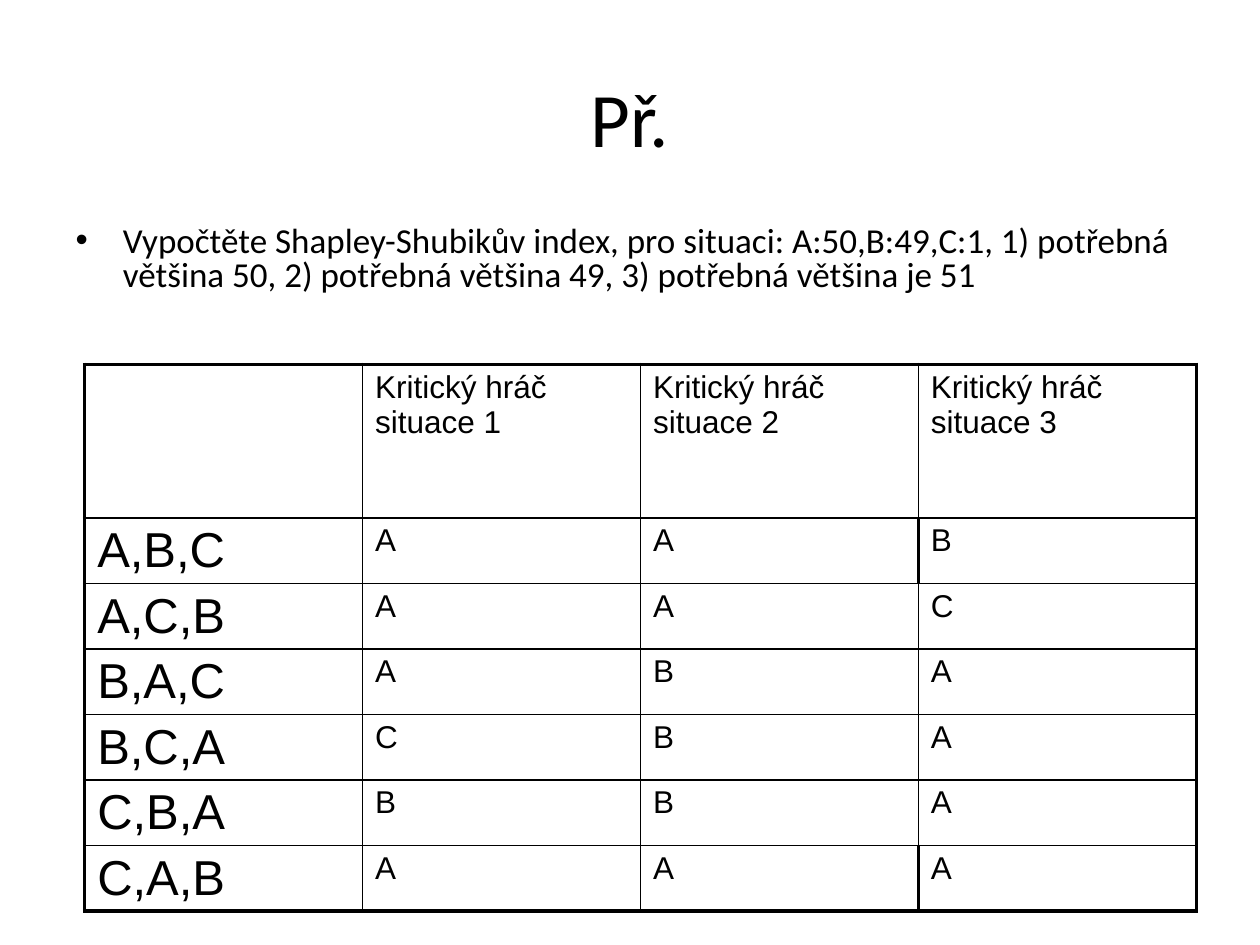
import pptx
import pptx.util
import pptx.dml.color
import pptx.enum.text
import pptx.oxml
import pptx.oxml.ns

Pt = pptx.util.Pt
BLACK = pptx.dml.color.RGBColor(0, 0, 0)
WHITE = pptx.dml.color.RGBColor(255, 255, 255)
THIN, THICK = 1, 2.25

ROWS = [
    ["", "Kritický hráč situace 1", "Kritický hráč situace 2", "Kritický hráč situace 3"],
    ["A,B,C", "A", "A", "B"],
    ["A,C,B", "A", "A", "C"],
    ["B,A,C", "A", "B", "A"],
    ["B,C,A", "C", "B", "A"],
    ["C,B,A", "B", "B", "A"],
    ["C,A,B", "A", "A", "A"],
]
HEADER_HEIGHT, ROW_HEIGHT = 87.8, 36
COLUMN_WIDTH = 158.8
# Rows whose divider before the last column is thick
THICK_DIVIDER_ROWS = (1, len(ROWS) - 1)


def set_values(target, values):
    for name, value in values.items():
        setattr(target, name, value)


def fill_placeholder(box, bounds, text, size, anchor, **para_format):
    for name, value in zip(("left", "top", "width", "height"), bounds):
        setattr(box, name, Pt(value))
    frame = box.text_frame
    set_values(frame, {"word_wrap": True, "vertical_anchor": anchor,
                       "auto_size": pptx.enum.text.MSO_AUTO_SIZE.NONE})
    para = frame.paragraphs[0]
    set_values(para, para_format)
    add_span(para, text, "Calibri", size)


def add_span(para, text, font, size):
    span = para.add_run()
    span.text = text
    set_values(span.font, {"name": font, "size": Pt(size)})
    span.font.color.rgb = BLACK


def border_widths(row, column):
    """Widths of the left, right, top and bottom borders of a cell."""
    last_row, last_column = len(ROWS) - 1, len(ROWS[0]) - 1
    divided = row in THICK_DIVIDER_ROWS
    thick = {
        "L": column == 0 or (divided and column == last_column),
        "R": column == last_column or (divided and column == last_column - 1),
        "T": row == 0,
        "B": row == last_row,
    }
    return {side: THICK if is_thick else THIN for side, is_thick in thick.items()}


def set_borders(cell, widths):
    properties = cell._tc.get_or_add_tcPr()
    for side, width in widths.items():
        properties.append(pptx.oxml.parse_xml(
            f'<a:ln{side} {pptx.oxml.ns.nsdecls("a")} w="{int(Pt(width))}">'
            f'<a:solidFill><a:srgbClr val="{BLACK}"/></a:solidFill></a:ln{side}>'))


def add_player_table(page):
    height = HEADER_HEIGHT + ROW_HEIGHT * (len(ROWS) - 1)
    table = page.shapes.add_table(
        len(ROWS), len(ROWS[0]), Pt(48.4), Pt(208.2),
        Pt(COLUMN_WIDTH * len(ROWS[0])), Pt(height)).table
    set_values(table, {"first_row": False, "horz_banding": False})
    for column in table.columns:
        column.width = Pt(COLUMN_WIDTH)
    for row, texts in enumerate(ROWS):
        table.rows[row].height = Pt(ROW_HEIGHT if row else HEADER_HEIGHT)
        for column, text in enumerate(texts):
            cell = table.cell(row, column)
            set_values(cell, {"margin_top": Pt(3.1), "margin_bottom": Pt(3.1)})
            set_borders(cell, border_widths(row, column))
            cell.fill.solid()
            cell.fill.fore_color.rgb = WHITE
            if text:
                add_span(cell.text_frame.paragraphs[0], text, "Arial", 18 if column else 28)


def main():
    deck = pptx.Presentation()
    set_values(deck, {"slide_width": Pt(720), "slide_height": Pt(540)})
    page = deck.slides.add_slide(deck.slide_layouts[1])
    anchors = pptx.enum.text.MSO_ANCHOR
    fill_placeholder(page.shapes.title, (36, 21.6, 648, 90), "Př.", 44, anchors.MIDDLE,
                     alignment=pptx.enum.text.PP_ALIGN.CENTER)
    fill_placeholder(
        page.placeholders[1], (36, 126, 648, 76.3),
        "Vypočtěte Shapley-Shubikův index, pro situaci: A:50,B:49,C:1, "
        "1) potřebná většina 50, 2) potřebná většina 49, 3) potřebná většina je 51",
        20, anchors.TOP, line_spacing=0.8)
    add_player_table(page)
    deck.save("out.pptx")


if __name__ == "__main__":
    main()
